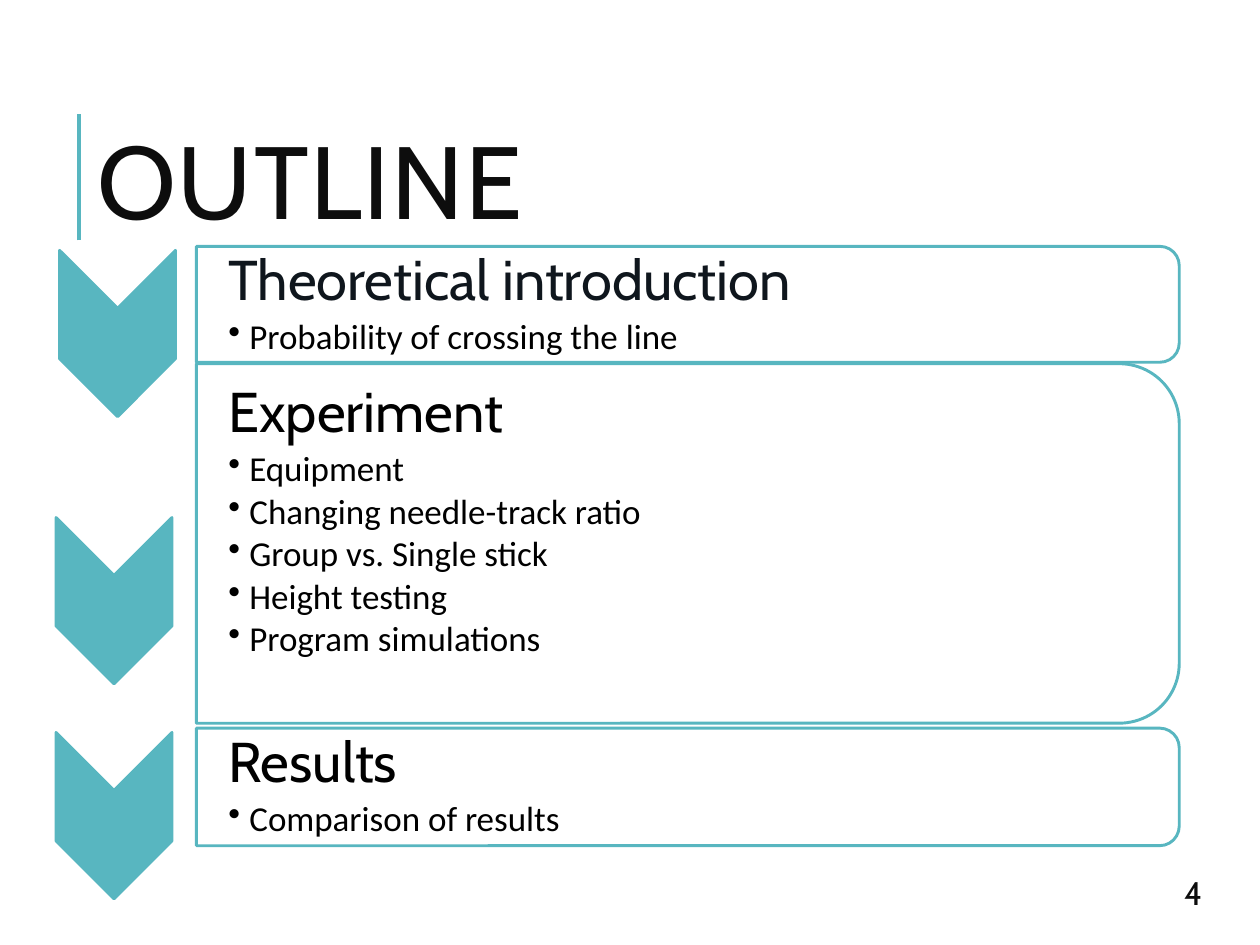
from pptx import Presentation
from pptx.dml.color import RGBColor
from pptx.enum.shapes import MSO_CONNECTOR, MSO_SHAPE
from pptx.enum.text import MSO_ANCHOR
from pptx.oxml.ns import qn
from pptx.util import Pt
from lxml.etree import SubElement

TEAL = RGBColor(0x58, 0xB6, 0xC0)
WHITE = RGBColor(0xFF, 0xFF, 0xFF)
BLACK = RGBColor(0, 0, 0)
NAVY = RGBColor(0x0F, 0x16, 0x1D)
INK = RGBColor(0x0D, 0x0D, 0x0D)

PANEL_LEFT, PANEL_WIDTH = 84.2, 421.2
CHEVRON_WIDTH, CHEVRON_HEIGHT = 49.7, 71.3

# Heading, its colour, bullets, panel top and height, chevron left and top,
# text top and height
SECTIONS = [
    ("Theoretical introduction", NAVY, ["Probability of crossing the line"],
     (105.6, 49.7), (25.5, 107.3), (108, 45.4)),
    ("Experiment", BLACK,
     ["Equipment", "Changing needle-track ratio", "Group vs. Single stick",
      "Height testing", "Program simulations"],
     (155.9, 154.1), (24, 221.8), (163.4, 120.5)),
    ("Results", BLACK, ["Comparison of results"],
     (312.1, 50.4), (24, 313.9), (314.6, 45.4)),
]


def add_turned_shape(page, preset, left, top, width, height, fill):
    """Add a shape turned by 90 degrees that covers the given area."""
    shape = page.shapes.add_shape(
        preset, Pt(left + (width - height) / 2), Pt(top + (height - width) / 2),
        Pt(height), Pt(width))
    shape.rotation = 90
    shape.shadow.inherit = False
    shape.fill.solid()
    shape.fill.fore_color.rgb = fill
    shape.line.color.rgb = TEAL
    shape.line.width = Pt(1.25)


def add_text_frame(page, left, top, width, height, insets, anchor):
    box = page.shapes.add_textbox(Pt(left), Pt(top), Pt(width), Pt(height))
    frame = box.text_frame
    frame.word_wrap = True
    frame.vertical_anchor = anchor
    (frame.margin_left, frame.margin_top,
     frame.margin_right, frame.margin_bottom) = map(Pt, insets)
    return frame


def write(para, text, font, size, color, line_spacing=1.0, space_after=0):
    para.text = text
    para.font.name = font
    para.font.size = Pt(size)
    para.font.color.rgb = color
    para.line_spacing = line_spacing
    para.space_after = Pt(space_after)


def add_bullet(para):
    props = para._p.get_or_add_pPr()
    props.set("marL", str(Pt(9)))
    props.set("indent", str(-Pt(9)))
    bullet = props.makeelement(qn("a:buChar"), {"char": "•"})
    props.insert_element_before(bullet, "a:tabLst", "a:defRPr", "a:extLst")


def add_title(page):
    rule = page.shapes.add_connector(
        MSO_CONNECTOR.STRAIGHT, Pt(33.8), Pt(103), Pt(33.8), Pt(49))
    rule.line.color.rgb = TEAL
    rule.line.width = Pt(1.5)
    SubElement(rule._element.spPr, qn("a:effectLst"))

    frame = add_text_frame(page, 36.7, 55.4, 503, 33.8, [5] * 4, MSO_ANCHOR.TOP)
    para = frame.paragraphs[0]
    write(para, "OUTLINE", "Cabin", 44, INK, 0.8)
    para.runs[0].font._element.set("spc", "80")


def add_section(page, heading, color, bullets, panel, chevron, text_area):
    add_turned_shape(page, MSO_SHAPE.CHEVRON, *chevron,
                     CHEVRON_WIDTH, CHEVRON_HEIGHT, TEAL)
    top, height = panel
    add_turned_shape(page, MSO_SHAPE.ROUND_2_SAME_RECTANGLE,
                     PANEL_LEFT, top, PANEL_WIDTH, height, WHITE)

    top, height = text_area
    frame = add_text_frame(page, PANEL_LEFT, top, 415, height,
                           [13.7, 1.4, 1.4, 1.4], MSO_ANCHOR.MIDDLE)
    write(frame.paragraphs[0], heading, "Cabin", 24, color, 0.9, 3)
    for bullet in bullets:
        para = frame.add_paragraph()
        write(para, bullet, "Calibri", 15, BLACK, 0.9, 2)
        add_bullet(para)


def add_page_number(page):
    frame = add_text_frame(page, 500.4, 367.2, 32.4, 31, [7.2] * 4,
                           MSO_ANCHOR.MIDDLE)
    write(frame.paragraphs[0], "4", "Cabin", 14, INK)


def main():
    deck = Presentation()
    deck.slide_width, deck.slide_height = Pt(540), Pt(405)
    page = deck.slides.add_slide(deck.slide_layouts[6])
    add_title(page)
    for section in SECTIONS:
        add_section(page, *section)
    add_page_number(page)
    deck.save("out.pptx")


if __name__ == "__main__":
    main()
